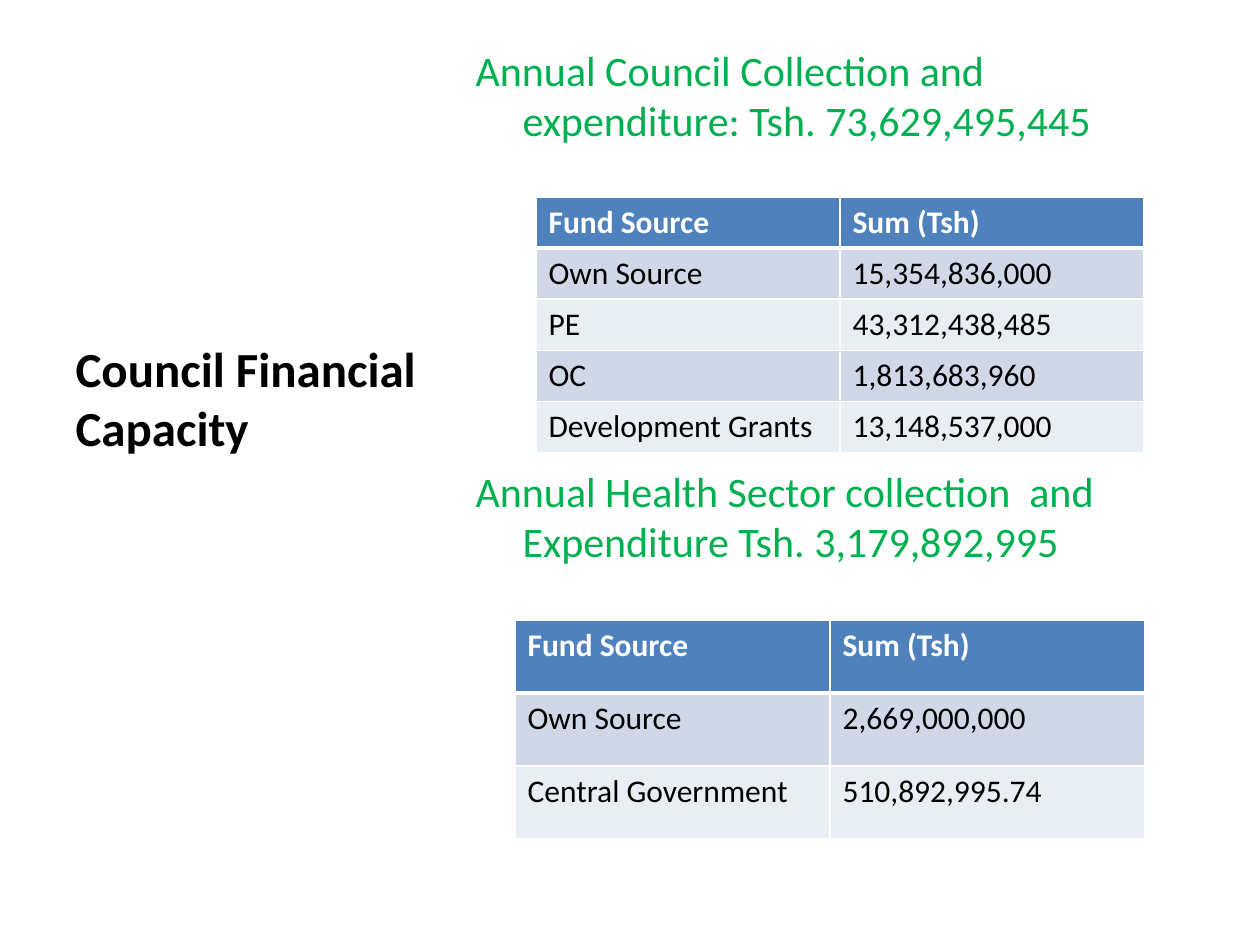
from lxml.etree import SubElement
from pptx import Presentation
from pptx.dml.color import RGBColor
from pptx.enum.text import MSO_ANCHOR, MSO_AUTO_SIZE, PP_ALIGN
from pptx.oxml import parse_xml
from pptx.oxml.ns import nsdecls, qn
from pptx.util import Emu, Pt

SCALE = 914400 / 126
HEAD, BANDS = "4F81BD", ("D0D8E8", "E9EDF4")
TITLES = ("Fund Source", "Sum (Tsh)")
COUNCIL = [
    TITLES,
    ("Own Source", "15,354,836,000"),
    ("PE", "43,312,438,485"),
    ("OC", "1,813,683,960"),
    ("Development Grants", "13,148,537,000"),
]
HEALTH = [
    TITLES,
    ("Own Source", "2,669,000,000"),
    ("Central Government", "510,892,995.74"),
]
NOTES = [
    "Annual Council Collection and expenditure: Tsh. 73,629,495,445",
    "Annual Health Sector collection  and Expenditure Tsh. 3,179,892,995",
]


def px(n):
    return Emu(round(n * SCALE))


def color(code):
    return RGBColor.from_string(code)


def style(par, size, code, bold=False):
    font = par.font
    font.name, font.size, font.bold = "Calibri", Pt(size), bold
    font.color.rgb = color(code)


def place(shape, left, top, width, height):
    shape.left, shape.top = px(left), px(top)
    shape.width, shape.height = px(width), px(height)


def add_title(slide, text):
    title = slide.shapes.title
    place(title, 63, 38, 415, 425)
    frame = title.text_frame
    frame.text = text
    frame.auto_size = MSO_AUTO_SIZE.NONE
    frame.vertical_anchor = MSO_ANCHOR.BOTTOM
    par = frame.paragraphs[0]
    par.alignment = PP_ALIGN.LEFT
    style(par, 28, "000000", True)


def add_notes(slide, lines):
    body = slide.placeholders[1]
    place(body, 463, 38, 735, 886)
    frame = body.text_frame
    frame.text = "\n".join(lines)
    frame.auto_size = MSO_AUTO_SIZE.NONE
    for par in frame.paragraphs:
        style(par, 24, "00B050")
        # Hanging indent without a bullet
        props = par._p.get_or_add_pPr()
        props.set("marL", str(px(47)))
        props.set("indent", str(-px(47)))
        SubElement(props, qn("a:buNone"))
    # Leave room for the first table
    frame.paragraphs[1].space_before = Pt(183)


def add_edges(cell, row):
    widths = {"L": 1, "R": 1, "T": 3 if row == 1 else 1, "B": 3 if row == 0 else 1}
    props = cell._tc.get_or_add_tcPr()
    for i, (side, width) in enumerate(widths.items()):
        props.insert(i, parse_xml(
            f'<a:ln{side} {nsdecls("a")} w="{Pt(width)}"><a:solidFill>'
            f'<a:srgbClr val="FFFFFF"/></a:solidFill></a:ln{side}>'))


def add_grid(slide, rows, left, top, col, high):
    count, wide = len(rows), len(rows[0])
    grid = slide.shapes.add_table(
        count, wide, px(left), px(top), px(col * wide), px(high * count)).table
    for line in grid.rows:
        line.height = px(high)
    for r, row in enumerate(rows):
        for c, text in enumerate(row):
            cell = grid.cell(r, c)
            cell.text = text
            cell.fill.solid()
            cell.fill.fore_color.rgb = color(BANDS[(r - 1) % 2] if r else HEAD)
            style(cell.text_frame.paragraphs[0], 18,
                  "000000" if r else "FFFFFF", r == 0)
            add_edges(cell, r)


def main():
    deck = Presentation()
    deck.slide_width, deck.slide_height = px(1260), px(945)
    slide = deck.slides.add_slide(deck.slide_layouts[1])
    # Heading and captions
    add_title(slide, "Council Financial Capacity")
    add_notes(slide, NOTES)
    # Fund tables
    add_grid(slide, COUNCIL, 536, 197, 304, 50)
    add_grid(slide, HEALTH, 515, 620, 315, 73)
    deck.save("out.pptx")


if __name__ == "__main__":
    main()
